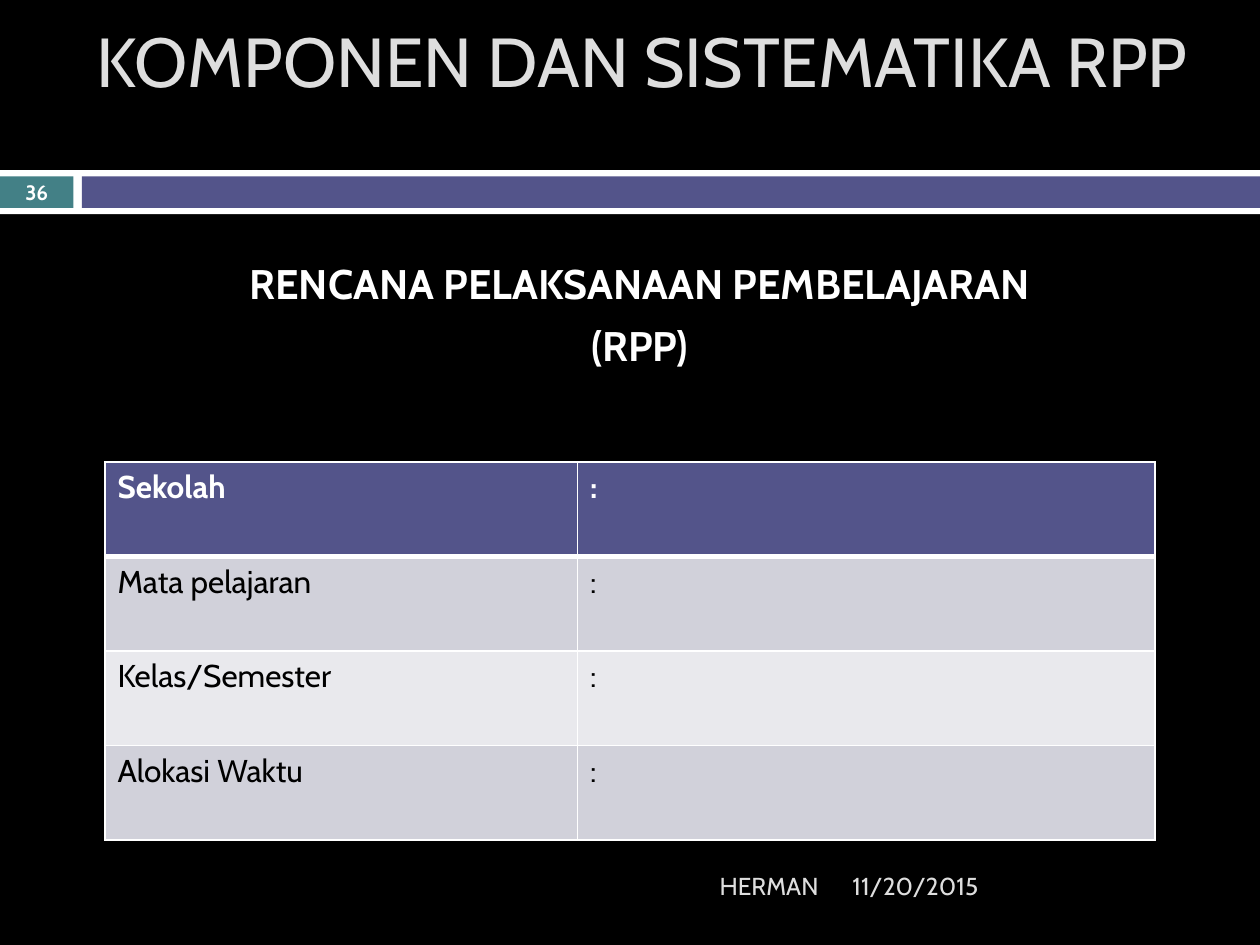
from lxml import etree
from pptx import Presentation
from pptx.dml.color import RGBColor
from pptx.enum import shapes, text
from pptx.oxml import ns
from pptx.util import Pt

COLORS = {
    "black": "000000", "white": "FFFFFF", "teal": "438086", "indigo": "53548A",
    "grey": "DEDEDE", "band_dark": "D1D1DA", "band_light": "E9E9ED",
}
FONT = "Cabin"
TITLE = "KOMPONEN DAN SISTEMATIKA RPP"
HEADING = ["RENCANA PELAKSANAAN PEMBELAJARAN", "(RPP)"]
FIELDS = ["Sekolah", "Mata pelajaran", "Kelas/Semester", "Alokasi Waktu"]
BARS = [
    ((0, 97.2, 720, 25.2), "white"),
    ((0, 100.8, 42, 18), "teal"),
    ((46.8, 100.8, 673.2, 18), "indigo"),
]
LABELS = [
    ("11/20/2015", (480, 492, 210, 28.8), 14, "grey", False, "LEFT"),
    ("HERMAN", (48, 492, 427, 28.8), 14, "grey", False, "RIGHT"),
    ("36", (0, 100, 42, 19.2), 11.9, "white", True, "CENTER"),
]
TITLE_BOX = (48, 18, 642, 78)
HEADING_BOX = (48, 144, 642, 84)
TABLE_BOX = (60, 264, 600, 216)
COLUMN_WIDTHS = [270, 330]


def color(name):
    """Return the named colour."""
    return RGBColor.from_string(COLORS[name])


def points(values):
    """Convert numbers to point lengths."""
    return [Pt(value) for value in values]


def place(shape, box):
    """Move and size a shape."""
    shape.left, shape.top, shape.width, shape.height = points(box)


def write(para, words, size, ink, bold=False, align="LEFT"):
    """Add one formatted run to a paragraph."""
    para.alignment = text.PP_ALIGN[align]
    span = para.add_run()
    span.text = words
    span.font.name, span.font.size, span.font.bold = FONT, Pt(size), bold
    span.font.color.rgb = color(ink)


def set_frame(frame, anchor, insets):
    """Set wrapping, anchor and left, top, right, bottom insets."""
    frame.word_wrap = True
    frame.auto_size = text.MSO_AUTO_SIZE.NONE
    frame.vertical_anchor = text.MSO_ANCHOR[anchor]
    (frame.margin_left, frame.margin_top,
     frame.margin_right, frame.margin_bottom) = points(insets)


def add_bars(page):
    """Draw the divider band."""
    for box, fill in BARS:
        bar = page.shapes.add_shape(shapes.MSO_SHAPE.RECTANGLE, *points(box))
        bar.shadow.inherit = False
        bar.fill.solid()
        bar.fill.fore_color.rgb = color(fill)
        bar.line.fill.background()


def fill_title(page):
    """Fill the title placeholder."""
    title = page.shapes.title
    place(title, TITLE_BOX)
    set_frame(title.text_frame, "MIDDLE", (7.2, 0, 0, 46))
    write(title.text_frame.paragraphs[0], TITLE, 39.6, "grey")


def fill_heading(page):
    """Fill the body placeholder with centred, unbulleted lines."""
    body = page.placeholders[1]
    place(body, HEADING_BOX)
    frame = body.text_frame
    set_frame(frame, "TOP", (7.2, 3.6, 14, 3.6))
    for index, line in enumerate(HEADING):
        para = frame.add_paragraph() if index else frame.paragraphs[0]
        para.space_before = Pt(7)
        write(para, line, 23.6, "white", True, "CENTER")
        props = para._p.get_or_add_pPr()
        props.set("marL", "0")
        props.set("indent", "0")
        etree.SubElement(props, ns.qn("a:buNone"))


def add_labels(page):
    """Add the date, author and page number."""
    for words, box, size, ink, bold, align in LABELS:
        label = page.shapes.add_textbox(*points(box))
        set_frame(label.text_frame, "MIDDLE", (7.2, 3.6, 7.2, 3.6))
        write(label.text_frame.paragraphs[0], words, size, ink, bold, align)


def add_borders(cell, widths):
    """Give a cell white borders, one width per side."""
    props = cell._tc.get_or_add_tcPr()
    for side, width in widths.items():
        line = etree.SubElement(props, ns.qn(f"a:ln{side}"), w=str(Pt(width)))
        solid = etree.SubElement(line, ns.qn("a:solidFill"))
        etree.SubElement(solid, ns.qn("a:srgbClr"), val=COLORS["white"])


def add_fields(page):
    """Add the table of lesson plan fields."""
    table = page.shapes.add_table(
        len(FIELDS), len(COLUMN_WIDTHS), *points(TABLE_BOX)).table
    for column, width in zip(table.columns, COLUMN_WIDTHS):
        column.width = Pt(width)
    for row, field in enumerate(FIELDS):
        header = row == 0
        fill = "indigo" if header else ("band_light", "band_dark")[row % 2]
        widths = {"L": 1, "R": 1, "T": 3 if row == 1 else 1, "B": 3 if header else 1}
        for column, words in enumerate((field, ":")):
            cell = table.cell(row, column)
            add_borders(cell, widths)
            cell.fill.solid()
            cell.fill.fore_color.rgb = color(fill)
            write(cell.text_frame.paragraphs[0], words, 18,
                  "white" if header else "black", header)


def main():
    """Build and save the slide."""
    deck = Presentation()
    deck.slide_width, deck.slide_height = Pt(720), Pt(540)
    page = deck.slides.add_slide(deck.slide_layouts[1])
    page.background.fill.solid()
    page.background.fill.fore_color.rgb = color("black")
    add_bars(page)
    fill_title(page)
    fill_heading(page)
    add_labels(page)
    add_fields(page)
    deck.save("out.pptx")


if __name__ == "__main__":
    main()
